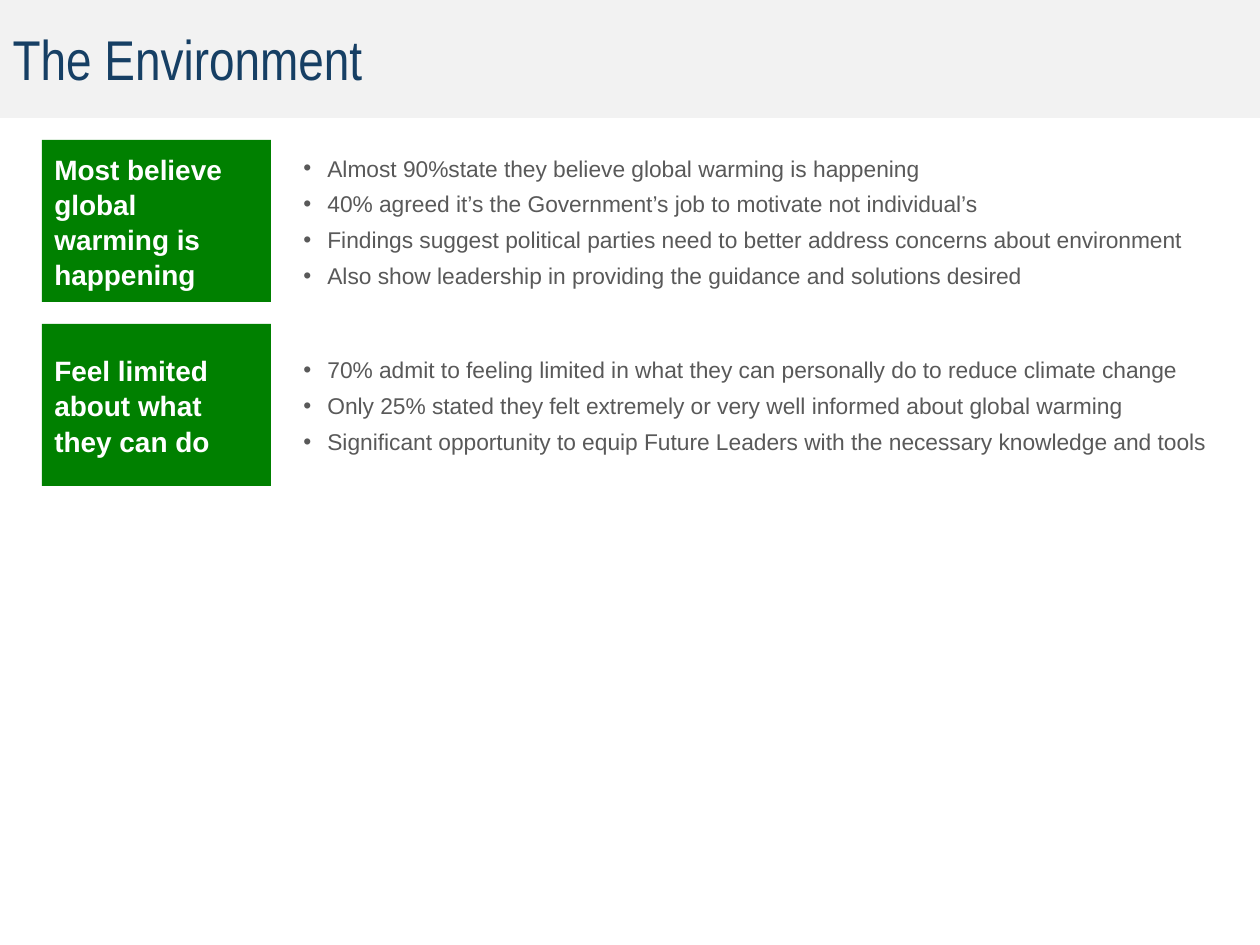
from dataclasses import dataclass

from lxml import etree
from pptx import Presentation
from pptx import util as u
from pptx.dml.color import RGBColor
from pptx.enum import shapes, text
from pptx.oxml.ns import qn

PX = 914400 // 126


@dataclass(frozen=True)
class Theme:
    banner: str = "F2F2F2"
    title: str = "163F64"
    label_fill: str = "008000"
    label_text: str = "FFFFFF"
    body: str = "595959"
    title_font: str = "Arial Narrow"
    body_font: str = "Arial"
    title_size: int = 32
    label_size: int = 16
    body_size: int = 13
    line_spacing: float = 1.05


@dataclass(frozen=True)
class Box:
    left: int
    top: int
    width: int
    height: int

    def emu(self) -> list[int]:
        return [side * PX for side in (self.left, self.top, self.width, self.height)]


@dataclass(frozen=True)
class Topic:
    label: str
    points: tuple[str, ...]


THEME = Theme()
ROW_TOP, ROW_HEIGHT, ROW_PITCH = 140, 162, 184
BULLET_INDENT = 24

TOPICS = (
    Topic("Most believe global warming is happening", (
        "Almost 90%state they believe global warming is happening",
        "40% agreed it’s the Government’s job to motivate not individual’s",
        "Findings suggest political parties need to better address concerns about environment",
        "Also show leadership in providing the guidance and solutions desired",
    )),
    Topic("Feel limited about what they can do", (
        "70% admit to feeling limited in what they can personally do to reduce climate change",
        "Only 25% stated they felt extremely or very well informed about global warming",
        "Significant opportunity to equip Future Leaders with the necessary knowledge and tools",
    )),
)


def fill_solid(shape, color: str) -> None:
    shape.fill.solid()
    shape.fill.fore_color.rgb = RGBColor.from_string(color)


def format_frame(frame) -> None:
    frame.word_wrap = True
    frame.auto_size = text.MSO_AUTO_SIZE.NONE
    frame.vertical_anchor = text.MSO_ANCHOR.MIDDLE


def format_paragraph(paragraph, name: str, size: int, color: str, bold: bool = False) -> None:
    paragraph.alignment = text.PP_ALIGN.LEFT
    for run in paragraph.runs:
        run.font.name = name
        run.font.size = u.Pt(size)
        run.font.bold = bold
        run.font.color.rgb = RGBColor.from_string(color)


def add_bullet(paragraph) -> None:
    properties = paragraph._p.get_or_add_pPr()
    properties.set("marL", str(BULLET_INDENT * PX))
    properties.set("indent", str(-BULLET_INDENT * PX))
    etree.SubElement(properties, qn("a:buFont"), typeface=THEME.body_font)
    etree.SubElement(properties, qn("a:buChar"), char="•")


def draw_title(slide, wording: str, box: Box) -> None:
    title = slide.shapes.title
    title.left, title.top, title.width, title.height = box.emu()
    fill_solid(title, THEME.banner)
    title.text_frame.text = wording
    format_frame(title.text_frame)
    format_paragraph(title.text_frame.paragraphs[0], THEME.title_font, THEME.title_size, THEME.title)


def draw_label(slide, wording: str, box: Box) -> None:
    label = slide.shapes.add_shape(shapes.MSO_SHAPE.RECTANGLE, *box.emu())
    label.shadow.inherit = False
    label.line.fill.background()
    fill_solid(label, THEME.label_fill)
    label.text_frame.text = wording
    format_frame(label.text_frame)
    paragraph = label.text_frame.paragraphs[0]
    paragraph.line_spacing = THEME.line_spacing
    format_paragraph(paragraph, THEME.body_font, THEME.label_size, THEME.label_text, bold=True)


def draw_points(slide, points: tuple[str, ...], box: Box) -> None:
    frame = slide.shapes.add_textbox(*box.emu()).text_frame
    frame.text = "\n".join(points)
    format_frame(frame)
    for index, paragraph in enumerate(frame.paragraphs):
        add_bullet(paragraph)
        paragraph.line_spacing = THEME.line_spacing
        paragraph.space_before = u.Pt(2 if index else 0)
        paragraph.space_after = u.Pt(2)
        format_paragraph(paragraph, THEME.body_font, THEME.body_size, THEME.body)


def main() -> None:
    presentation = Presentation()
    presentation.slide_width = 1260 * PX
    presentation.slide_height = 945 * PX
    slide = presentation.slides.add_slide(presentation.slide_layouts[5])
    draw_title(slide, "The Environment", Box(0, -1, 1260, 119))
    for row, topic in enumerate(TOPICS):
        top = ROW_TOP + row * ROW_PITCH
        draw_label(slide, topic.label, Box(42, top, 229, ROW_HEIGHT))
        draw_points(slide, topic.points, Box(291, top, 930, ROW_HEIGHT))
    presentation.save("out.pptx")


if __name__ == "__main__":
    main()
